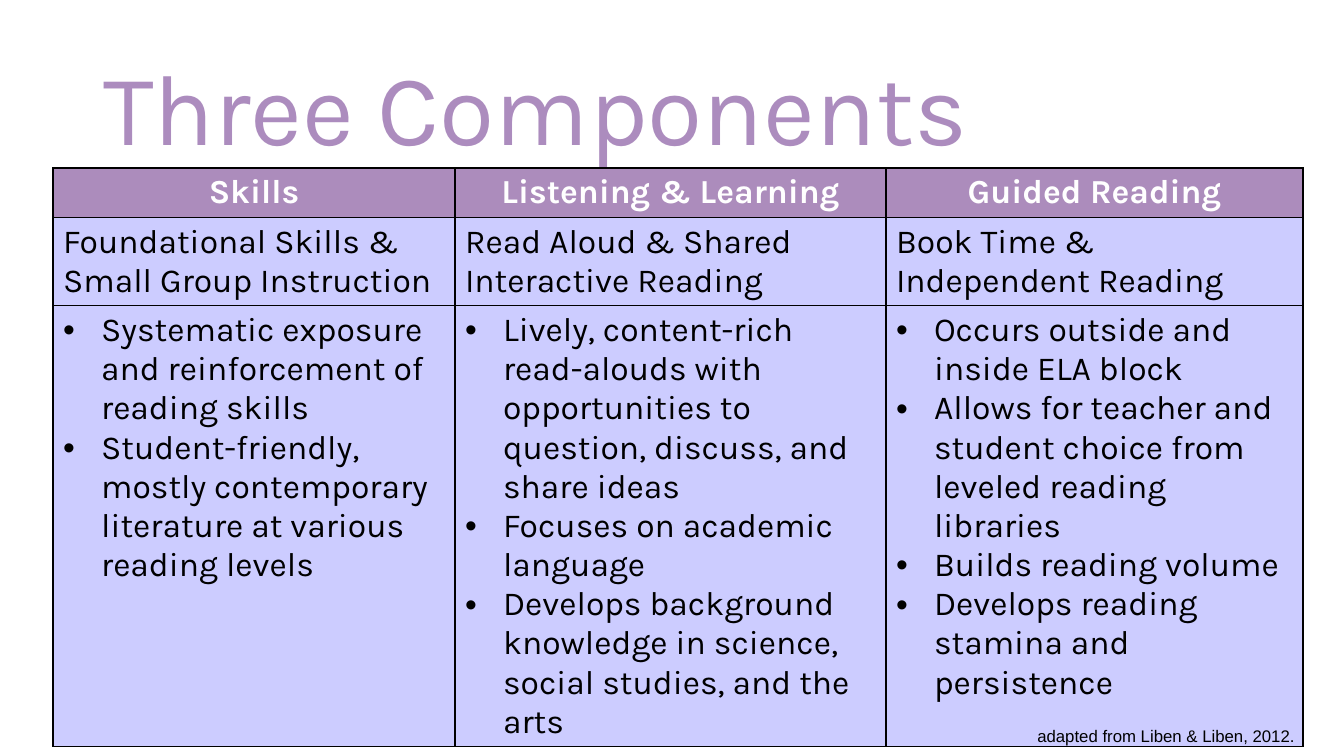
from lxml.etree import SubElement
from pptx import Presentation
from pptx.dml.color import RGBColor
from pptx.enum.text import MSO_ANCHOR, MSO_AUTO_SIZE, PP_ALIGN
from pptx.oxml.ns import qn
from pptx.util import Emu, Pt

EMU_PER_PX = 914400 / 100.8
COLUMN_WIDTHS = [402, 431, 417]
ROW_HEIGHTS = [49, 88, 441]
BULLET_INDENT = 38
COLUMNS = [
    ("Skills", "Foundational Skills & Small Group Instruction", [
        "Systematic exposure and reinforcement of reading skills",
        "Student-friendly, mostly contemporary literature at various reading levels",
    ]),
    ("Listening & Learning", "Read Aloud & Shared Interactive Reading", [
        "Lively, content-rich read-alouds with opportunities to question, discuss, and share ideas",
        "Focuses on academic language",
        "Develops background knowledge in science, social studies, and the arts",
    ]),
    ("Guided Reading", "Book Time & Independent Reading", [
        "Occurs outside and inside ELA block",
        "Allows for teacher and student choice from leveled reading libraries",
        "Builds reading volume",
        "Develops reading stamina and persistence",
    ]),
]


def px(length):
    return Emu(round(length * EMU_PER_PX))


def color(value):
    return RGBColor.from_string(value)


def write(para, text, size=24, font="Karla", fill="000000", bold=False,
          align=PP_ALIGN.LEFT, spacing=None, bullet=False):
    para.alignment = align
    if spacing:
        para.line_spacing = spacing
    if bullet:
        properties = para._p.get_or_add_pPr()
        properties.set("marL", str(px(BULLET_INDENT)))
        properties.set("indent", str(-px(BULLET_INDENT)))
        SubElement(properties, qn("a:buFont"), typeface="Arial")
        SubElement(properties, qn("a:buChar"), char="•")
    span = para.add_run()
    span.text = text
    span.font.size = Pt(size)
    span.font.name = font
    span.font.bold = bold
    span.font.color.rgb = color(fill)


def add_title(page, left, top, width, height):
    title = page.shapes.title
    title.left, title.top, title.width, title.height = map(px, (left, top, width, height))
    frame = title.text_frame
    frame.word_wrap = True
    frame.auto_size = MSO_AUTO_SIZE.NONE
    frame.vertical_anchor = MSO_ANCHOR.MIDDLE
    write(frame.paragraphs[0], "Three Components", size=72, fill="AC8CBE", spacing=0.9)


def format_cell(cell, background):
    properties = cell._tc.get_or_add_tcPr()
    for side in ("a:lnL", "a:lnR", "a:lnT", "a:lnB"):
        line = SubElement(properties, qn(side), w=str(Pt(1)))
        SubElement(SubElement(line, qn("a:solidFill")), qn("a:srgbClr"), val="000000")
    cell.fill.solid()
    cell.fill.fore_color.rgb = color(background)


def add_components_table(page, left, top):
    table = page.shapes.add_table(
        len(ROW_HEIGHTS), len(COLUMN_WIDTHS), px(left), px(top),
        px(sum(COLUMN_WIDTHS)), px(sum(ROW_HEIGHTS))).table
    for row, height in zip(table.rows, ROW_HEIGHTS):
        row.height = px(height)
    for index, (heading, setting, points) in enumerate(COLUMNS):
        table.columns[index].width = px(COLUMN_WIDTHS[index])
        header, subheader, body = (table.cell(row, index) for row in range(3))
        format_cell(header, "AC8CBC")
        format_cell(subheader, "CCCCFF")
        format_cell(body, "CCCCFF")
        write(header.text_frame.paragraphs[0], heading, fill="FFFFFF", bold=True,
              align=PP_ALIGN.CENTER)
        write(subheader.text_frame.paragraphs[0], setting)
        frame = body.text_frame
        for number, point in enumerate(points):
            para = frame.add_paragraph() if number else frame.paragraphs[0]
            write(para, point, bullet=True)


def add_credit(page, left, top, width, height):
    box = page.shapes.add_textbox(*map(px, (left, top, width, height)))
    frame = box.text_frame
    frame.word_wrap = True
    frame.auto_size = MSO_AUTO_SIZE.SHAPE_TO_FIT_TEXT
    write(frame.paragraphs[0], "adapted from Liben & Liben, 2012.", size=12,
          font="Arial", align=PP_ALIGN.RIGHT)


def main():
    deck = Presentation()
    deck.slide_width, deck.slide_height = px(1344), px(756)
    page = deck.slides.add_slide(deck.slide_layouts[5])
    add_title(page, 93, 40, 1159, 146)
    add_components_table(page, 53, 168)
    add_credit(page, 562, 721, 743, 30)
    deck.save("out.pptx")


if __name__ == "__main__":
    main()
